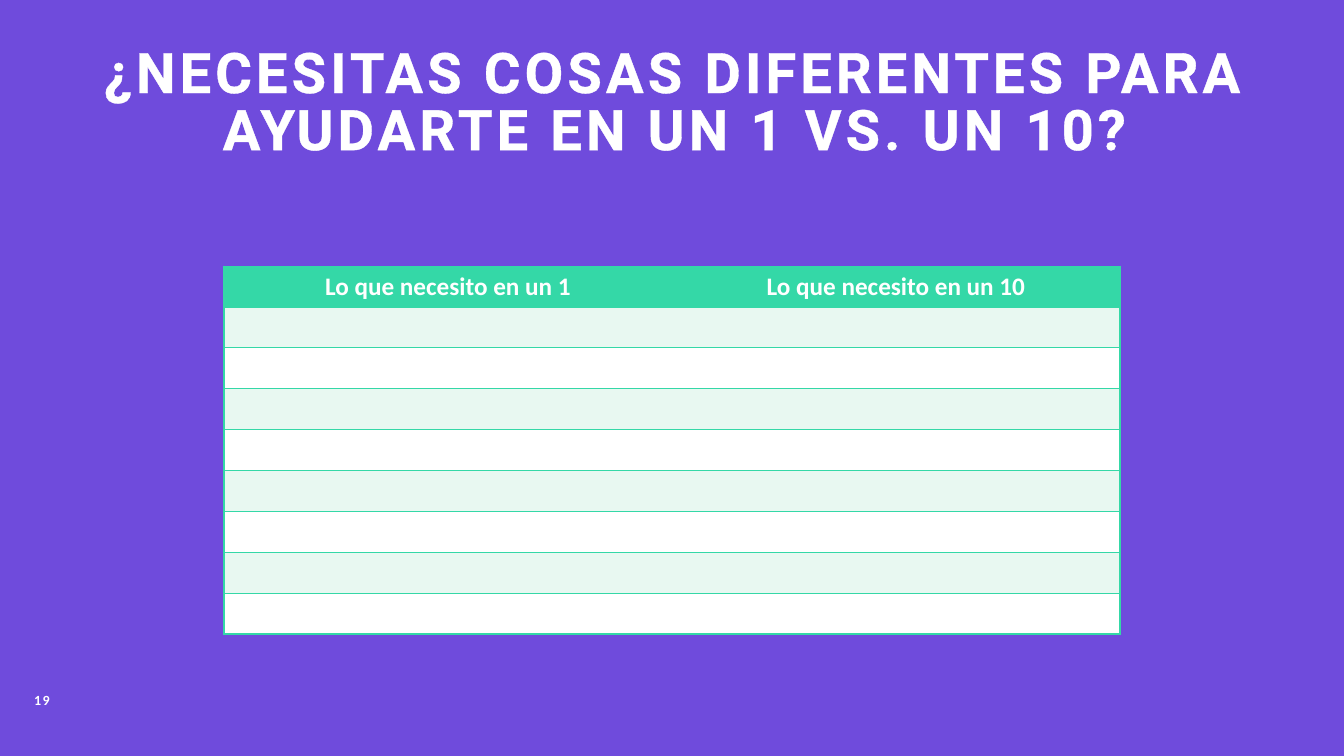
from lxml.etree import SubElement
from pptx import Presentation
from pptx.dml.color import RGBColor
from pptx.enum.text import MSO_ANCHOR, MSO_AUTO_SIZE, PP_ALIGN
from pptx.oxml import parse_xml
from pptx.oxml.ns import nsdecls, qn
from pptx.util import Inches, Pt

COLORS = {"purple": "6F4BDC", "green": "34D8A7", "mint": "E8F8F1", "white": "FFFFFF"}
WIDTH, HEIGHT = Inches(13.33), Inches(7.5)
HEADINGS = ["Lo que necesito en un 1", "Lo que necesito en un 10"]
ROWS = 9
PLAIN_TABLE_STYLE = "{2D5ABB26-0587-4C30-8999-92F81FD0307C}"


def paint(fill, color):
    fill.solid()
    fill.fore_color.rgb = RGBColor.from_string(COLORS[color])


def line_xml(tag, color, points):
    return parse_xml(
        f'<a:{tag} {nsdecls("a")} w="{Pt(points)}"><a:solidFill>'
        f'<a:srgbClr val="{COLORS[color]}"/></a:solidFill></a:{tag}>'
    )


def write(frame, text, font, size, spacing=0):
    """Put one centred line of bold white text in the frame."""
    para = frame.paragraphs[0]
    para.text = text
    para.alignment = PP_ALIGN.CENTER
    span = para.runs[0]
    span.font.name, span.font.size, span.font.bold = font, Pt(size), True
    paint(span.font.fill, "white")
    if spacing:
        span.font._element.set("spc", str(spacing * 100))
    return para


def add_title(page, left, top, width, height):
    title = page.shapes.title
    title.left, title.top, title.width, title.height = left, top, width, height
    frame = title.text_frame
    frame.word_wrap = True
    frame.auto_size = MSO_AUTO_SIZE.NONE
    frame.vertical_anchor = MSO_ANCHOR.TOP
    frame.margin_left = frame.margin_right = 0
    para = write(frame, "¿NECESITAS COSAS DIFERENTES PARA AYUDARTE EN UN 1 VS. UN 10?",
                 "Roboto", 40, spacing=3)
    para.line_spacing = 0.85
    para.space_before, para.space_after = Pt(10), Pt(12)
    para.runs[0].font._element.insert(0, line_xml("ln", "white", 0.75))


def add_page_number(page, left, top, width, height):
    frame = page.shapes.add_textbox(left, top, width, height).text_frame
    frame.word_wrap = True
    frame.vertical_anchor = MSO_ANCHOR.BOTTOM
    write(frame, "19", "Calibri", 10, spacing=1)


def set_borders(cell, sides):
    properties = cell._tc.get_or_add_tcPr()
    for position, side in enumerate(sides):
        properties.insert(position, line_xml(f"ln{side}", "green", 1))


def add_needs_table(page, left, top, width, height):
    table = page.shapes.add_table(ROWS, len(HEADINGS), left, top, width, height).table
    table.horz_banding = False
    table._tbl.tblPr.find(qn("a:tableStyleId")).text = PLAIN_TABLE_STYLE
    for row_index, row in enumerate(table.rows):
        row.height = int(height / ROWS)
        for column, cell in enumerate(row.cells):
            if row_index == 0:
                write(cell.text_frame, HEADINGS[column], "Calibri", 18)
                paint(cell.fill, "green")
            else:
                paint(cell.fill, "mint" if row_index % 2 else "white")
            set_borders(cell, "RTB" if column else "LTB")


def build_slide(deck):
    page = deck.slides.add_slide(deck.slide_layouts[5])
    paint(page.background.fill, "purple")
    add_title(page, Inches(0.39), Inches(0.42), Inches(12.61), Inches(1.55))
    add_page_number(page, 0, Inches(6.29), Inches(0.83), Inches(0.79))
    add_needs_table(page, int(WIDTH / 6), Inches(2.64), int(WIDTH * 2 / 3), Inches(3.65))


def main():
    deck = Presentation()
    deck.slide_width, deck.slide_height = WIDTH, HEIGHT
    build_slide(deck)
    deck.save("out.pptx")


if __name__ == "__main__":
    main()
